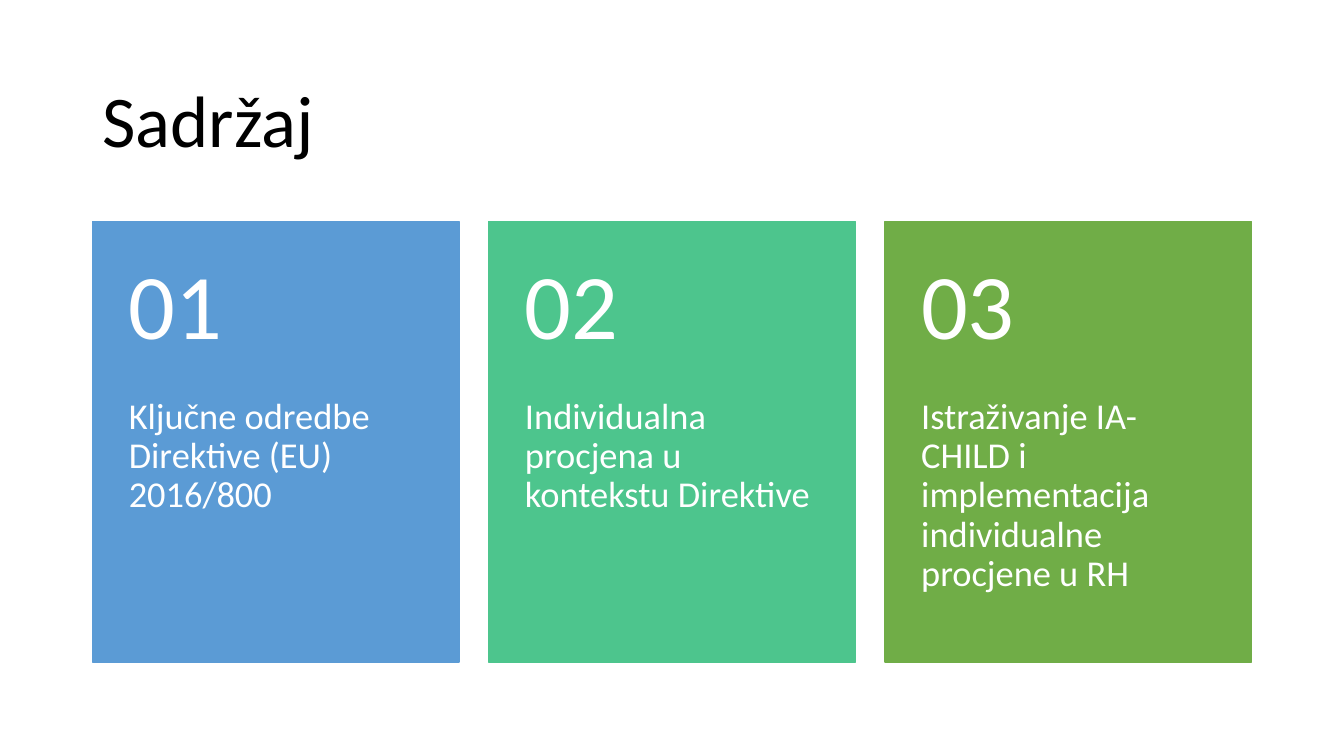
from dataclasses import dataclass

from pptx import Presentation
from pptx.dml.color import RGBColor
from pptx.enum.shapes import MSO_SHAPE
from pptx.enum.text import MSO_ANCHOR, PP_ALIGN
from pptx.util import Pt


@dataclass(frozen=True)
class Theme:
    font: str = "Calibri"
    title_color: str = "000000"
    card_text: str = "FFFFFF"
    card_fills: tuple = ("5B9BD5", "4DC58D", "70AD47")
    title_size: int = 52
    number_size: int = 66
    topic_size: int = 26


theme = Theme()


def add_text(text, box, size, color, insets, anchor, space_after=0):
    """Add a wrapped text box; box and insets are in points."""
    frame = slide.shapes.add_textbox(*map(Pt, box)).text_frame
    frame.word_wrap = True
    frame.vertical_anchor = anchor
    (frame.margin_left, frame.margin_top,
     frame.margin_right, frame.margin_bottom) = map(Pt, insets)
    frame.text = text
    paragraph = frame.paragraphs[0]
    paragraph.alignment = PP_ALIGN.LEFT
    paragraph.line_spacing = 0.9
    paragraph.space_after = Pt(space_after)
    font = paragraph.runs[0].font
    font.name = theme.font
    font.size = Pt(size)
    font.color.rgb = RGBColor.from_string(color)


prs = Presentation()
prs.slide_width, prs.slide_height = Pt(960), Pt(540)
slide = prs.slides.add_slide(prs.slide_layouts[6])

left, content_width = 66, 828
add_text("Sadržaj", (left, 44, content_width, 89), theme.title_size,
         theme.title_color, (7.2, 3.6, 7.2, 3.6), MSO_ANCHOR.MIDDLE)

topics = [
    "Ključne odredbe Direktive (EU) 2016/800",
    "Individualna procjena u kontekstu Direktive",
    "Istraživanje IA- CHILD i implementacija individualne procjene u RH",
]
card_top, card_width, card_height = 158.4, 262, 314.6
pitch = (content_width - card_width) / (len(topics) - 1)
number_height = card_height * 0.4
topic_top = card_top + number_height
topic_height = card_height - number_height
inset = 26

for index, (topic, fill) in enumerate(zip(topics, theme.card_fills)):
    x = left + index * pitch
    card = slide.shapes.add_shape(
        MSO_SHAPE.RECTANGLE, Pt(x), Pt(card_top), Pt(card_width), Pt(card_height))
    card.shadow.inherit = False
    card.fill.solid()
    card.fill.fore_color.rgb = RGBColor.from_string(fill)
    card.line.color.rgb = RGBColor.from_string(fill)
    card.line.width = Pt(1)

    add_text(topic, (x, topic_top, card_width, topic_height), theme.topic_size,
             theme.card_text, (inset, 0, inset, inset), MSO_ANCHOR.TOP,
             theme.topic_size * 0.35)
    add_text(f"{index + 1:02}", (x, card_top, card_width, number_height),
             theme.number_size, theme.card_text,
             (inset, inset / 2, inset, inset / 2), MSO_ANCHOR.MIDDLE)

prs.save("out.pptx")
